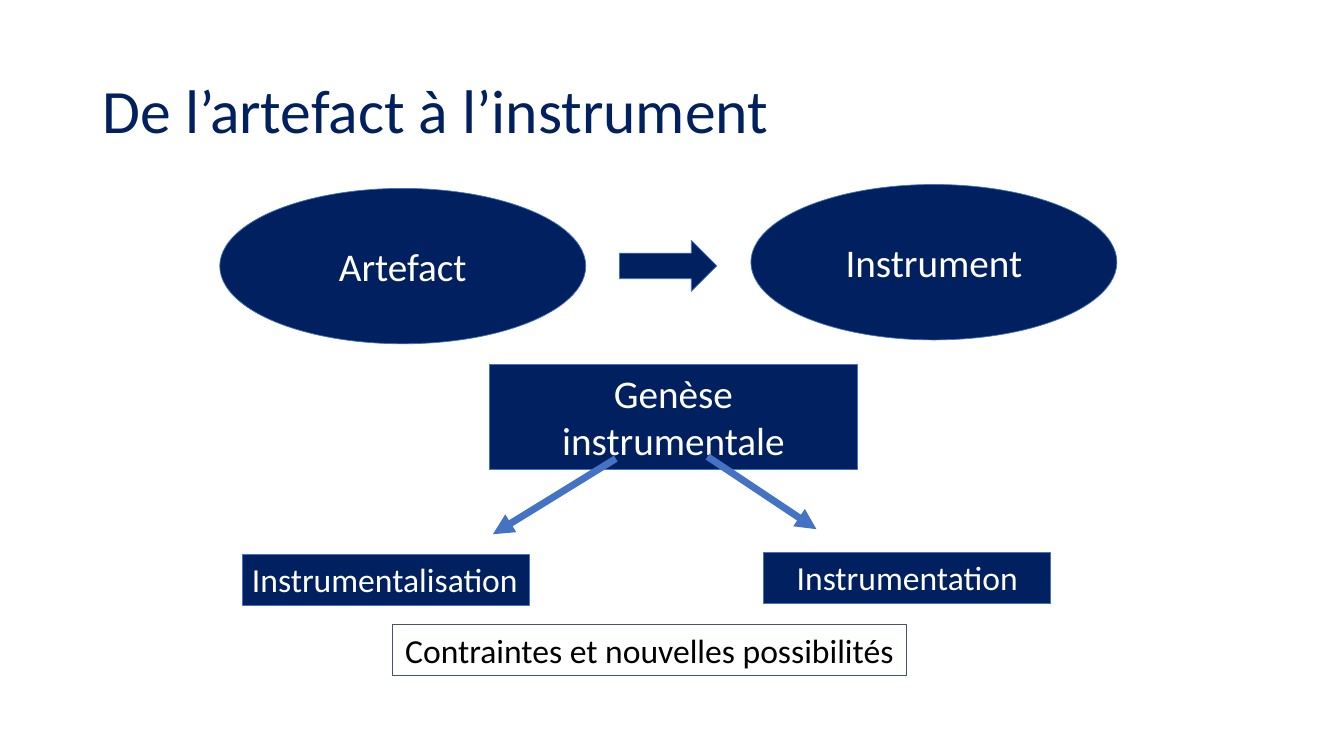
from lxml import etree
from pptx import Presentation
from pptx.dml.color import RGBColor
from pptx.enum import shapes, text
from pptx.oxml import ns
from pptx.util import Pt

COLORS = {"navy": "002060", "blue": "4472C4", "slate": "44546A",
          "white": "FFFFFF", "black": "000000"}
FONT = "Calibri"
TITLE = ("De l’artefact à l’instrument", (66.24, 28.8, 828, 104.4))
ELLIPSE, ARROW, RECT = (shapes.MSO_SHAPE.OVAL, shapes.MSO_SHAPE.RIGHT_ARROW,
                        shapes.MSO_SHAPE.RECTANGLE)
LEFT, CENTER = text.PP_ALIGN.LEFT, text.PP_ALIGN.CENTER
TOP, MIDDLE = text.MSO_ANCHOR.TOP, text.MSO_ANCHOR.MIDDLE

NAVY_STYLE = ("navy", "blue", "white")
NOTE_STYLE = (None, "slate", "black")
OVAL_SIZE, LABEL_SIZE = (261.4, 111), (205.2, 36.35)
BLOCKS = [
    (ELLIPSE, "Artefact", (157, 134.6), OVAL_SIZE, 28, CENTER, NAVY_STYLE, 0.5),
    (ELLIPSE, "Instrument", (536.4, 131.8), OVAL_SIZE, 28, CENTER, NAVY_STYLE, 0.5),
    (ARROW, "", (442.6, 171.8), (69.4, 36.4), 28, CENTER, NAVY_STYLE, 0.5),
    (RECT, "Genèse instrumentale", (349.4, 260.4), (263.2, 75.1), 28, CENTER, NAVY_STYLE, 0.75),
    (RECT, "Instrumentalisation", (172.9, 396), LABEL_SIZE, 24, LEFT, NAVY_STYLE, 0.75),
    (RECT, "Instrumentation", (545.4, 394.6), LABEL_SIZE, 24, CENTER, NAVY_STYLE, 0.75),
    (RECT, "Contraintes et nouvelles possibilités", (280.1, 446.2), (367.5, 36.35), 24,
     CENTER, NOTE_STYLE, 0.75),
]
BRANCHES = [((505.4, 326.2), (583.2, 378)), ((439.9, 327.6), (352.1, 381.6))]


def rgb(name):
    return RGBColor.from_string(COLORS[name])


def write(sp, words, size, color, align, anchor):
    tf = sp.text_frame
    tf.word_wrap = True
    tf.vertical_anchor = anchor
    tf.text = words
    p = tf.paragraphs[0]
    p.alignment = align
    for r in p.runs:
        r.font.name, r.font.size, r.font.color.rgb = FONT, Pt(size), rgb(color)
    return p


def add_title(slide):
    words, box = TITLE
    sp = slide.shapes.add_textbox(*map(Pt, box))
    write(sp, words, 44, "navy", LEFT, MIDDLE).line_spacing = 0.9


def add_block(slide, kind, words, corner, extent, size, align, style, width):
    fill, line, color = style
    sp = slide.shapes.add_shape(kind, *map(Pt, corner + extent))
    sp.shadow.inherit = False
    if fill:
        sp.fill.solid()
        sp.fill.fore_color.rgb = rgb(fill)
    else:
        sp.fill.background()
    sp.line.color.rgb, sp.line.width = rgb(line), Pt(width)
    if words:
        write(sp, words, size, color, align, TOP if kind == RECT else MIDDLE)


def add_branch(slide, start, end):
    cx = slide.shapes.add_connector(shapes.MSO_CONNECTOR.STRAIGHT, *map(Pt, start + end))
    cx.line.color.rgb, cx.line.width = rgb("blue"), Pt(5)
    etree.SubElement(cx.line._get_or_add_ln(), ns.qn("a:tailEnd"), type="triangle")
    etree.SubElement(cx._element.spPr, ns.qn("a:effectLst"))


def main():
    """Build the slide on the move from artefact to instrument."""
    prs = Presentation()
    prs.slide_width, prs.slide_height = Pt(960), Pt(540)
    slide = prs.slides.add_slide(prs.slide_layouts[6])
    add_title(slide)
    for block in BLOCKS[:4]:
        add_block(slide, *block)
    for start, end in BRANCHES:
        add_branch(slide, start, end)
    for block in BLOCKS[4:]:
        add_block(slide, *block)
    prs.save("out.pptx")


if __name__ == "__main__":
    main()
